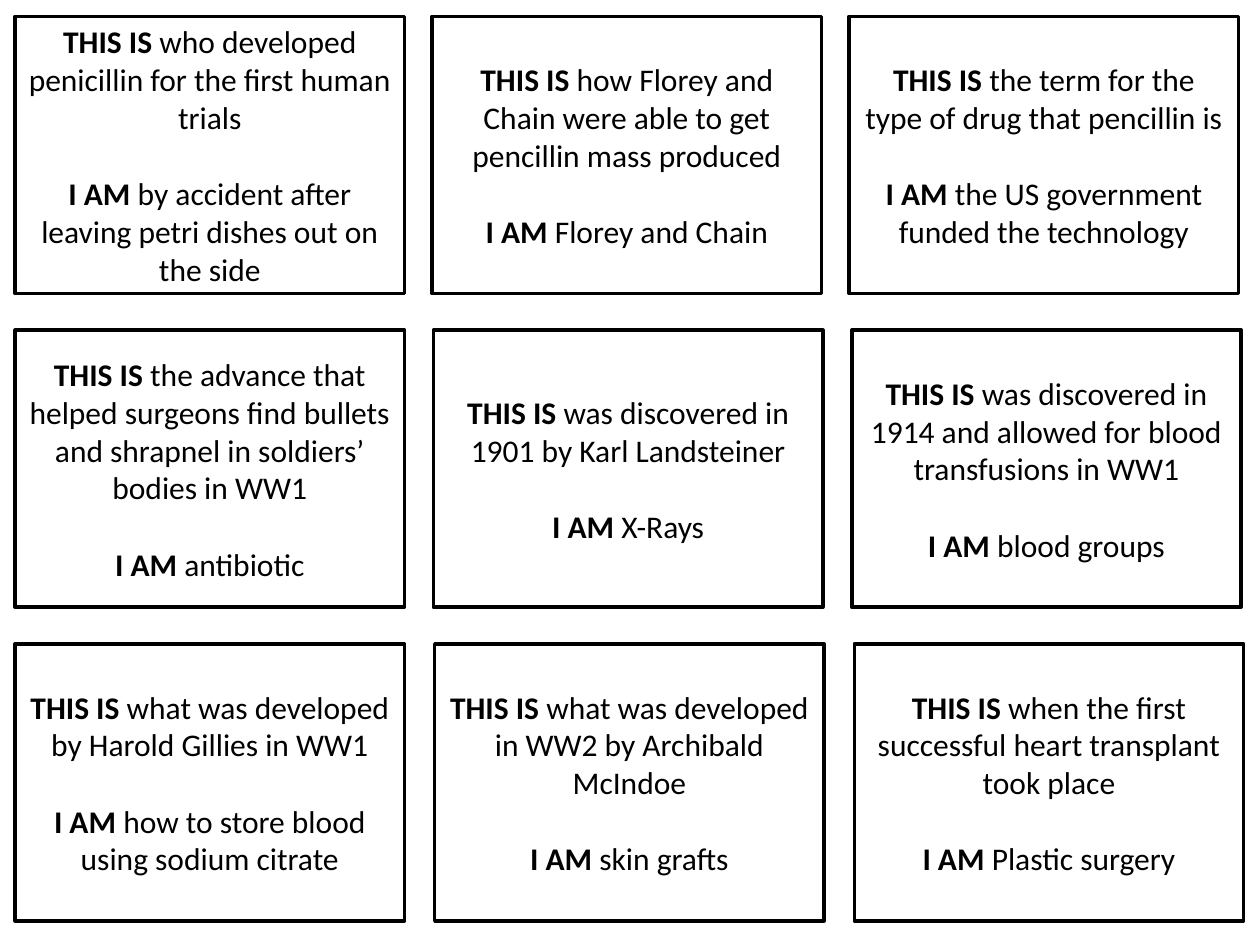
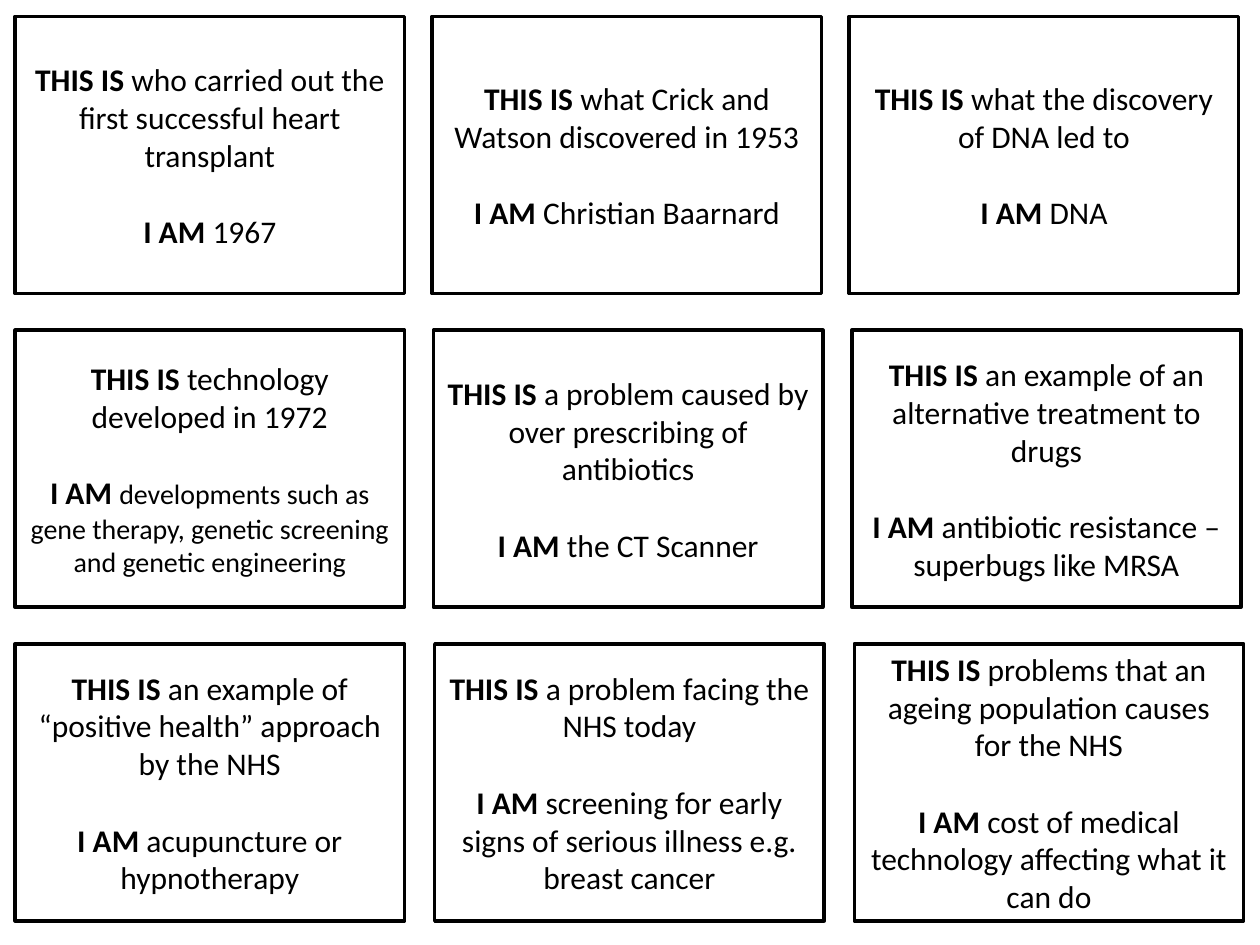
from pptx import Presentation
from pptx.dml.color import RGBColor
from pptx.enum.shapes import MSO_SHAPE
from pptx.enum.text import MSO_ANCHOR, PP_ALIGN
from pptx.util import Inches, Pt

RECTANGLE = MSO_SHAPE.RECTANGLE
MIDDLE = MSO_ANCHOR.MIDDLE
CENTER = PP_ALIGN.CENTER

# Each card: clue, answer to another card and, where needed, the answer's size
PENICILLIN_TO_TRANSPLANTS = [
    ("who developed penicillin for the first human trials",
     "by accident after leaving petri dishes out on the side"),
    ("how Florey and Chain were able to get pencillin mass produced",
     "Florey and Chain"),
    ("the term for the type of drug that pencillin is",
     "the US government funded the technology"),
    ("the advance that helped surgeons find bullets and shrapnel "
     "in soldiers’ bodies in WW1", "antibiotic"),
    ("was discovered in 1901 by Karl Landsteiner", "X-Rays"),
    ("was discovered in 1914 and allowed for blood transfusions in WW1",
     "blood groups"),
    ("what was developed by Harold Gillies in WW1",
     "how to store blood using sodium citrate"),
    ("what was developed in WW2 by Archibald McIndoe", "skin grafts"),
    ("when the first successful heart transplant took place",
     "Plastic surgery"),
]
DNA_TO_MODERN_HEALTH = [
    ("who carried out the first successful heart transplant", "1967"),
    ("what Crick and Watson discovered in 1953", "Christian Baarnard"),
    ("what the discovery of DNA led to", "DNA"),
    ("technology developed in 1972",
     "developments such as gene therapy, genetic screening "
     "and genetic engineering", 16),
    ("a problem caused by over prescribing of antibiotics",
     "the CT Scanner"),
    ("an example of an alternative treatment to drugs",
     "antibiotic resistance – superbugs like MRSA"),
    ("an example of “positive health” approach by the NHS",
     "acupuncture or hypnotherapy"),
    ("a problem facing the NHS today",
     "screening for early signs of serious illness e.g. breast cancer"),
    ("problems that an ageing population causes for the NHS",
     "cost of medical technology affecting what it can do"),
]


def color(hex_string):
    return RGBColor.from_string(hex_string)


class CardSheet:
    """Style and current slide of a sheet of loop cards."""
    INK, PAPER = "000000", "FFFFFF"
    FONT, SIZE, LINE_HEIGHT = "Calibri", 18, 22
    BORDER = 2
    COLUMNS = 3
    LEFT, TOP = 0.12, 0.13
    CARD_WIDTH, CARD_HEIGHT = 3.09, 2.2
    ROW_STEP = 2.49
    COLUMN_STEPS = (3.31, 3.32, 3.33)  # rows widen slightly downwards

    def __init__(self, presentation):
        self.presentation = presentation
        self.slide = None

    def add_sheet(self, cards):
        blank = self.presentation.slide_layouts[6]
        self.slide = self.presentation.slides.add_slide(blank)
        for index, card in enumerate(cards):
            row, column = divmod(index, self.COLUMNS)
            self.add_card(column, row, *card)

    def add_card(self, column, row, clue, answer, answer_size=SIZE):
        card = self.slide.shapes.add_shape(
            RECTANGLE,
            Inches(self.LEFT + column * self.COLUMN_STEPS[row]),
            Inches(self.TOP + row * self.ROW_STEP),
            Inches(self.CARD_WIDTH), Inches(self.CARD_HEIGHT))
        card.shadow.inherit = False
        card.fill.solid()
        card.fill.fore_color.rgb = color(self.PAPER)
        card.line.color.rgb = color(self.INK)
        card.line.width = Pt(self.BORDER)

        frame = card.text_frame
        frame.word_wrap = True
        frame.vertical_anchor = MIDDLE
        self.add_wording(frame.paragraphs[0], "THIS IS ", clue)
        answer_line = frame.add_paragraph()
        answer_line.space_before = Pt(self.LINE_HEIGHT)
        self.add_wording(answer_line, "I AM ", answer, answer_size)

    def add_wording(self, paragraph, lead, wording, wording_size=SIZE):
        paragraph.alignment = CENTER
        paragraph.font.name = self.FONT
        paragraph.font.size = Pt(self.SIZE)
        paragraph.font.color.rgb = color(self.INK)
        lead_run = paragraph.add_run()
        lead_run.text = lead
        lead_run.font.bold = True
        wording_run = paragraph.add_run()
        wording_run.text = wording
        if wording_size != self.SIZE:
            wording_run.font.size = Pt(wording_size)


def main():
    presentation = Presentation()
    presentation.slide_width = Inches(10)
    presentation.slide_height = Inches(7.5)
    sheet = CardSheet(presentation)
    for cards in (PENICILLIN_TO_TRANSPLANTS, DNA_TO_MODERN_HEALTH):
        sheet.add_sheet(cards)
    presentation.save("out.pptx")


if __name__ == "__main__":
    main()
